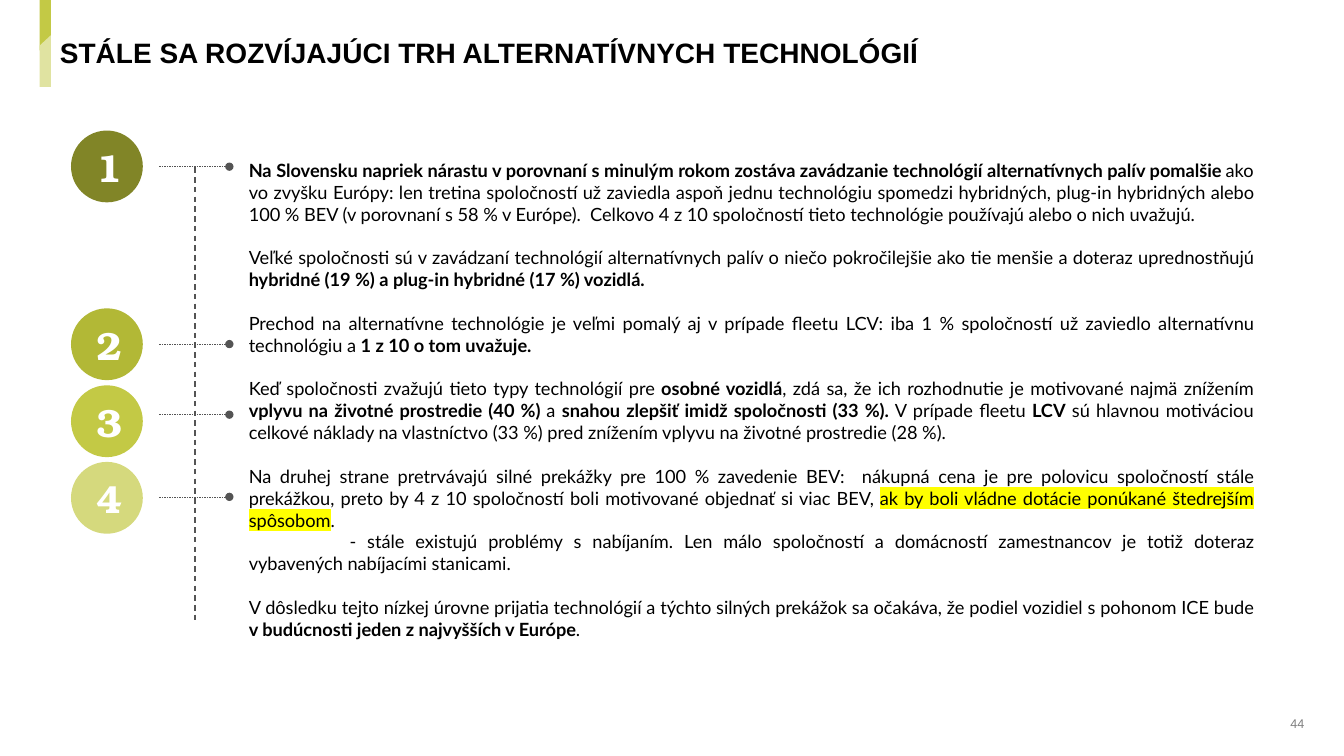
from lxml.etree import SubElement
from pptx import Presentation
from pptx.dml.color import RGBColor
from pptx.enum.dml import MSO_LINE
from pptx.enum.shapes import MSO_CONNECTOR, MSO_SHAPE
from pptx.enum.text import MSO_ANCHOR, PP_ALIGN
from pptx.oxml import parse_xml
from pptx.oxml.ns import nsdecls, qn
from pptx.util import Cm, Pt

theme = {
    "line": "545454",
    "bars": ["C3C945", "E0E3A1"],
    "circles": ["818527", "B2B836", "C3C945", "D5D97D"],
    "highlight": "FFFF00",
    "title": {"name": "Arial", "size": Pt(20), "bold": True, "color": "000000"},
    "number": {"name": "TeX Gyre Bonum", "size": Pt(28), "bold": True, "color": "FFFFFF"},
    "body": {"name": "Lato", "size": Pt(13), "bold": False, "color": "000000"},
    "page": {"name": "Arial", "size": Pt(9), "bold": False, "color": "808080"},
}


def fill_frame(shape, paragraphs, style, frame_format, para_format):
    frame = shape.text_frame
    margins = dict.fromkeys(["margin_left", "margin_top", "margin_right", "margin_bottom"], 0)
    for name, value in (margins | frame_format).items():
        setattr(frame, name, value)
    for index, pieces in enumerate(paragraphs):
        para = frame.paragraphs[0] if index == 0 else frame.add_paragraph()
        for name, value in para_format.items():
            setattr(para, name, value)
        for text, emphasis in pieces:
            span = para.add_run()
            span.text = text
            font_format = theme[style] | ({"bold": True} if emphasis == "bold" else {})
            for name, value in font_format.items():
                if name == "color":
                    span.font.color.rgb = RGBColor.from_string(value)
                else:
                    setattr(span.font, name, value)
            if emphasis == "highlight":
                mark = parse_xml(
                    f'<a:highlight {nsdecls("a")}><a:srgbClr val="{theme["highlight"]}"/></a:highlight>'
                )
                span.font._element.find(qn("a:solidFill")).addnext(mark)
    return frame


def add_dashed_line(page, start, end, width, dotted_end):
    line = page.shapes.add_connector(
        MSO_CONNECTOR.STRAIGHT, *[Cm(value) for value in start + end]
    )
    line.line.color.rgb = RGBColor.from_string(theme["line"])
    line.line.width = Pt(width)
    line.line.dash_style = MSO_LINE.DASH
    if dotted_end:
        SubElement(line.line._get_or_add_ln(), qn("a:tailEnd"), type="oval")
    SubElement(line._element.spPr, qn("a:effectLst"))


deck = Presentation()
deck.slide_width, deck.slide_height = Cm(33.87), Cm(19.05)
page = deck.slides.add_slide(deck.slide_layouts[6])

bars = [(0, 1.27, 180), (0.89, 1.3, 0)]
for (top, height, rotation), color in zip(bars, theme["bars"]):
    bar = page.shapes.add_shape(
        MSO_SHAPE.FLOWCHART_MANUAL_INPUT, Cm(1), Cm(top), Cm(0.28), Cm(height)
    )
    bar.rotation = rotation
    bar.shadow.inherit = False
    bar.fill.solid()
    bar.fill.fore_color.rgb = RGBColor.from_string(color)
    bar.line.fill.background()

title = page.shapes.add_textbox(Cm(1), Cm(1.07), Cm(31.87), Cm(0.69))
fill_frame(
    title,
    [[("STÁLE SA ROZVÍJAJÚCI TRH ALTERNATÍVNYCH TECHNOLÓGIÍ", None)]],
    "title",
    {"word_wrap": True, "margin_left": Cm(0.51)},
    {"line_spacing": 0.8},
)

add_dashed_line(page, (4.91, 4.22), (4.91, 15.65), 1, False)

markers = [(3.29, 4.2), (7.77, 8.67), (9.71, 10.45), (11.64, 12.52)]
for number, ((top, line_top), color) in enumerate(zip(markers, theme["circles"]), 1):
    add_dashed_line(page, (4.02, line_top), (5.78, line_top), 0.25, True)
    circle = page.shapes.add_shape(MSO_SHAPE.OVAL, Cm(1.79), Cm(top), Cm(1.81), Cm(1.81))
    circle.shadow.inherit = False
    circle.fill.solid()
    circle.fill.fore_color.rgb = RGBColor.from_string(color)
    circle.line.fill.background()
    fill_frame(
        circle,
        [[(str(number), None)]],
        "number",
        {
            "word_wrap": False,
            "vertical_anchor": MSO_ANCHOR.MIDDLE,
            "margin_left": Cm(0.13),
            "margin_top": Cm(0.17),
        },
        {"alignment": PP_ALIGN.CENTER, "line_spacing": 0.9},
    )

findings = [
    [
        ("Na Slovensku napriek nárastu v porovnaní s minulým rokom zostáva zavádzanie technológií alternatívnych palív pomalšie ", "bold"),
        ("ako vo zvyšku Európy: len tretina spoločností už zaviedla aspoň jednu technológiu spomedzi hybridných, plug-in hybridných alebo 100 % BEV (v porovnaní s 58 % v Európe).  Celkovo 4 z 10 spoločností tieto technológie používajú alebo o nich uvažujú.", None),
    ],
    [
        ("Veľké spoločnosti sú v zavádzaní technológií alternatívnych palív o niečo pokročilejšie ako tie menšie a doteraz uprednostňujú ", None),
        ("hybridné (19 %) a plug-in hybridné (17 %) vozidlá.", "bold"),
    ],
    [
        ("Prechod na alternatívne technológie je veľmi pomalý aj v prípade fleetu LCV: iba 1 % spoločností už zaviedlo alternatívnu technológiu a ", None),
        ("1 z 10 o tom uvažuje.", "bold"),
    ],
    [
        ("Keď spoločnosti zvažujú tieto typy technológií pre ", None),
        ("osobné vozidlá", "bold"),
        (", zdá sa, že ich rozhodnutie je motivované najmä znížením ", None),
        ("vplyvu na životné prostredie (40 %) ", "bold"),
        ("a ", None),
        ("snahou zlepšiť imidž spoločnosti (33 %). ", "bold"),
        ("V prípade fleetu ", None),
        ("LCV", "bold"),
        (" sú hlavnou motiváciou celkové náklady na vlastníctvo (33 %) pred znížením vplyvu na životné prostredie (28 %).", None),
    ],
    [
        ("Na druhej strane pretrvávajú silné prekážky pre 100 % zavedenie BEV:  nákupná cena je pre polovicu spoločností stále prekážkou, preto by 4 z 10 spoločností boli motivované objednať si viac BEV, ", None),
        ("ak by boli vládne dotácie ponúkané štedrejším spôsobom", "highlight"),
        (".", None),
    ],
    [
        ("- stále existujú problémy s nabíjaním. Len málo spoločností a domácností zamestnancov je totiž doteraz vybavených nabíjacími stanicami.", None),
    ],
    [
        ("V dôsledku tejto nízkej úrovne prijatia technológií a týchto silných prekážok sa očakáva, že podiel vozidiel s pohonom ICE bude ", None),
        ("v budúcnosti jeden z najvyšších v Európe", "bold"),
        (".", None),
    ],
]
body = page.shapes.add_textbox(Cm(6.27), Cm(4.01), Cm(25.32), Cm(12.78))
body_frame = fill_frame(
    body,
    findings,
    "body",
    {"word_wrap": True},
    {"alignment": PP_ALIGN.JUSTIFY, "space_before": Pt(15.6)},
)
body_frame.paragraphs[0].space_before = Pt(0)
charging = body_frame.paragraphs[5]
charging.space_before = Pt(0)
charging._p.get_or_add_pPr().set("indent", str(Cm(2.54)))

page_number = page.shapes.add_textbox(Cm(32.28), Cm(18.03), Cm(0.59), Cm(0.38))
fill_frame(
    page_number,
    [[("44", None)]],
    "page",
    {"word_wrap": False, "vertical_anchor": MSO_ANCHOR.MIDDLE},
    {"alignment": PP_ALIGN.RIGHT},
)

deck.save("out.pptx")
